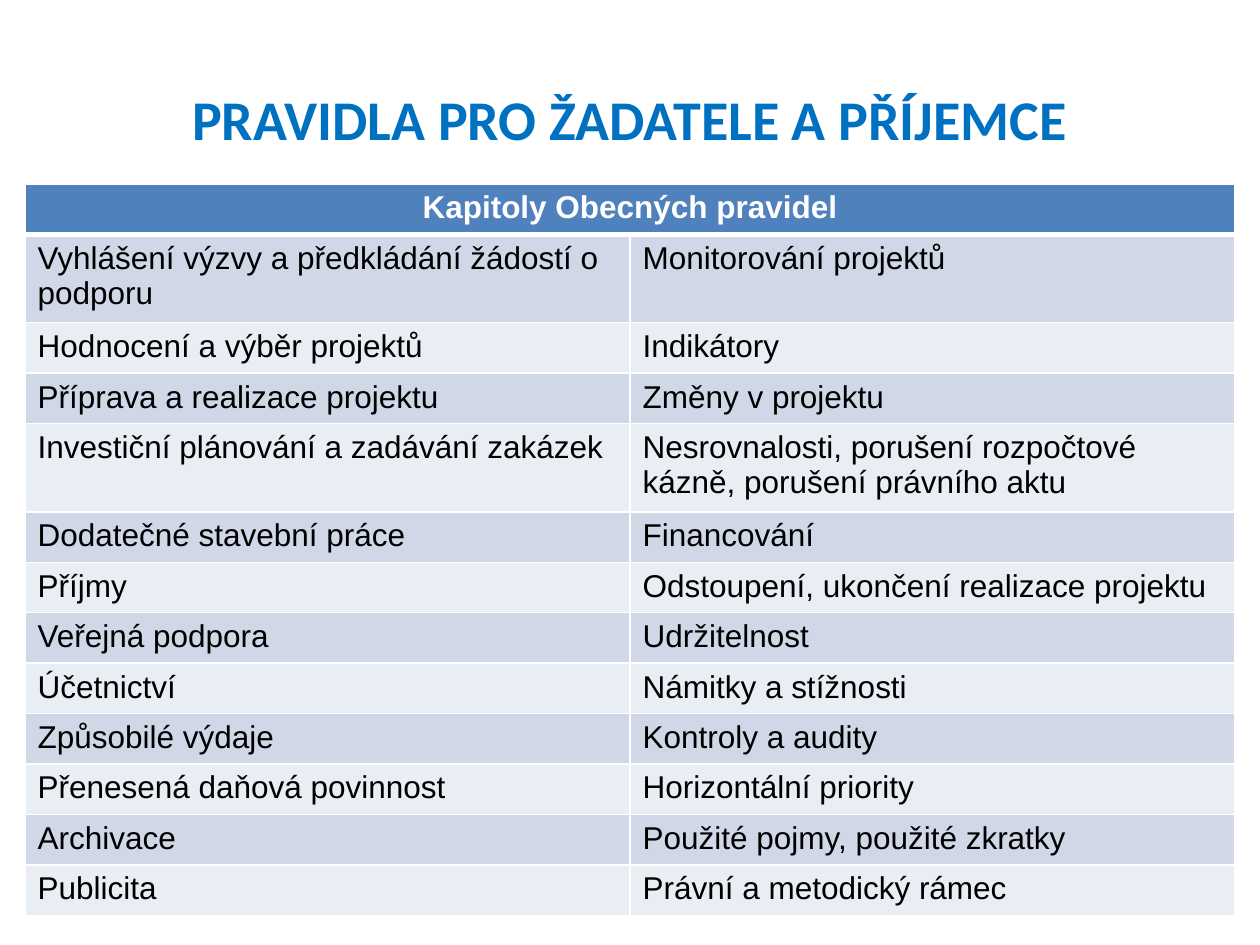
import pptx
import pptx.dml.color
import pptx.enum.text
import pptx.oxml
import pptx.oxml.ns
import pptx.util

RGBColor = pptx.dml.color.RGBColor
ALIGN = pptx.enum.text.PP_ALIGN

TITLE = "PRAVIDLA PRO ŽADATELE A PŘÍJEMCE"
HEADING = "Kapitoly Obecných pravidel"
CHAPTERS = [
    ("Vyhlášení výzvy a předkládání žádostí o podporu", "Monitorování projektů"),
    ("Hodnocení a výběr projektů", "Indikátory"),
    ("Příprava a realizace projektu", "Změny v projektu"),
    ("Investiční plánování a zadávání zakázek",
     "Nesrovnalosti, porušení rozpočtové kázně, porušení právního aktu"),
    ("Dodatečné stavební práce", "Financování"),
    ("Příjmy", "Odstoupení, ukončení realizace projektu"),
    ("Veřejná podpora", "Udržitelnost"),
    ("Účetnictví", "Námitky a stížnosti"),
    ("Způsobilé výdaje", "Kontroly a audity"),
    ("Přenesená daňová povinnost", "Horizontální priority"),
    ("Archivace", "Použité pojmy, použité zkratky"),
    ("Publicita", "Právní a metodický rámec"),
]

WHITE = RGBColor(0xFF, 0xFF, 0xFF)
BLACK = RGBColor(0x00, 0x00, 0x00)
TITLE_BLUE = RGBColor(0x00, 0x70, 0xC0)
HEADING_BLUE = RGBColor(0x4F, 0x81, 0xBD)
BANDS = [RGBColor(0xD0, 0xD8, 0xE8), RGBColor(0xE9, 0xED, 0xF4)]

TITLE_FORMAT = {"name": "Calibri", "size": pptx.util.Pt(32), "bold": True}
HEADING_FORMAT = {"name": "Arial", "size": pptx.util.Pt(18), "bold": True}
CHAPTER_FORMAT = {**HEADING_FORMAT, "bold": False}

PAGE_SIZE = (1260, 945)
TITLE_AREA = (63, 39, 1134, 158)
TABLE_LEFT, TABLE_TOP = 25, 184
COLUMN_WIDTH = 605
ROW_HEIGHT, TALL_ROW_HEIGHT = 49, 83
TALL_ROWS = (1, 4)


def px(length):
    return pptx.util.Emu(round(length * 914400 / 126))


def write(frame, text, font_format, color, align):
    para = frame.paragraphs[0]
    para.alignment = align
    span = para.add_run()
    span.text = text
    for name, value in font_format.items():
        setattr(span.font, name, value)
    span.font.color.rgb = color


def add_borders(cell, widths):
    properties = cell._tc.get_or_add_tcPr()
    for side, points in widths.items():
        properties.append(pptx.oxml.parse_xml(
            f'<a:ln{side} {pptx.oxml.ns.nsdecls("a")} w="{pptx.util.Pt(points)}">'
            f'<a:solidFill><a:srgbClr val="{WHITE}"/></a:solidFill></a:ln{side}>'))


def add_title(page):
    box = page.shapes.add_textbox(*map(px, TITLE_AREA))
    frame = box.text_frame
    frame.word_wrap = True
    frame.vertical_anchor = pptx.enum.text.MSO_ANCHOR.MIDDLE
    write(frame, TITLE, TITLE_FORMAT, TITLE_BLUE, ALIGN.CENTER)


def add_chapters(page):
    rows = [(HEADING, "")] + CHAPTERS
    heights = [TALL_ROW_HEIGHT if index in TALL_ROWS else ROW_HEIGHT
               for index in range(len(rows))]
    area = (TABLE_LEFT, TABLE_TOP, 2 * COLUMN_WIDTH, sum(heights))
    table = page.shapes.add_table(len(rows), 2, *map(px, area)).table
    for column in table.columns:
        column.width = px(COLUMN_WIDTH)
    table.cell(0, 0).merge(table.cell(0, 1))
    for index, texts in enumerate(rows):
        table.rows[index].height = px(heights[index])
        heading = index == 0
        for column, text in enumerate(texts):
            cell = table.cell(index, column)
            add_borders(cell, {"L": 1, "R": 1, "T": 3 if index == 1 else 1,
                               "B": 3 if heading else 1})
            cell.fill.solid()
            cell.fill.fore_color.rgb = HEADING_BLUE if heading else BANDS[(index - 1) % 2]
            if heading and text:
                write(cell.text_frame, text, HEADING_FORMAT, WHITE, ALIGN.CENTER)
            elif text:
                write(cell.text_frame, text, CHAPTER_FORMAT, BLACK, ALIGN.LEFT)


def main():
    deck = pptx.Presentation()
    deck.slide_width, deck.slide_height = map(px, PAGE_SIZE)
    page = deck.slides.add_slide(deck.slide_layouts[6])
    add_title(page)
    add_chapters(page)
    deck.save("out.pptx")


if __name__ == "__main__":
    main()
